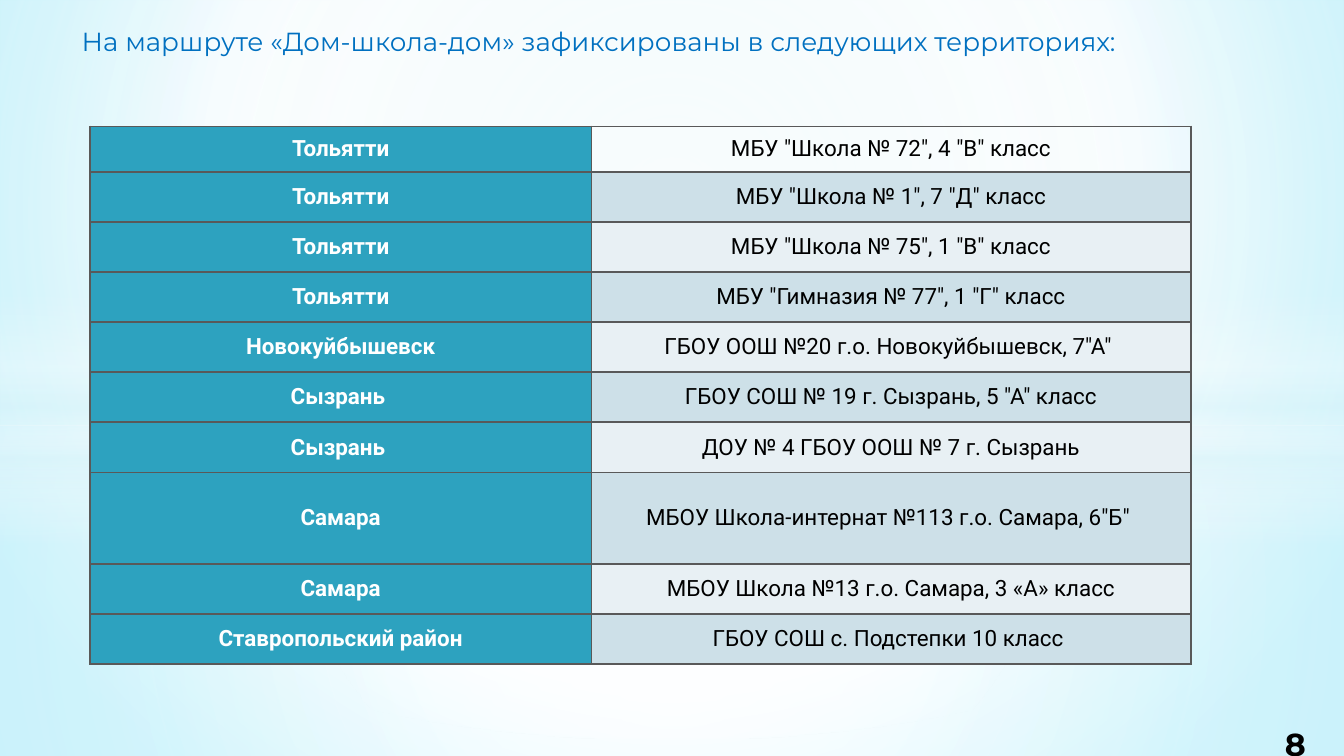
from lxml.etree import SubElement
from pptx import Presentation
from pptx.dml.color import RGBColor
from pptx.enum.shapes import MSO_SHAPE
from pptx.enum.text import MSO_ANCHOR, MSO_AUTO_SIZE, PP_ALIGN
from pptx.oxml.ns import qn
from pptx.util import Inches, Pt

ROWS = [
    ("Тольятти", 'МБУ "Школа № 72", 4 "В" класс'),
    ("Тольятти", 'МБУ "Школа № 1", 7 "Д" класс'),
    ("Тольятти", 'МБУ "Школа № 75", 1 "В" класс'),
    ("Тольятти", 'МБУ "Гимназия № 77", 1 "Г" класс'),
    ("Новокуйбышевск", 'ГБОУ ООШ №20 г.о. Новокуйбышевск, 7"А" '),
    ("Сызрань ", 'ГБОУ СОШ № 19 г. Сызрань, 5 "А" класс'),
    ("Сызрань ", "ДОУ № 4 ГБОУ ООШ № 7 г. Сызрань"),
    ("Самара", 'МБОУ Школа-интернат №113 г.о. Самара, 6"Б" '),
    ("Самара", "МБОУ Школа №13 г.о. Самара, 3 «А» класс"),
    ("Ставропольский район", "ГБОУ СОШ с. Подстепки 10 класс "),
]
WIDTHS = [3.73, 4.46]
TALL = 4  # whole table
HEIGHTS = {0: 0.34, 7: 0.68}  # the other rows share the rest
CENTER = (50, 50, 50, 50)


def color(code):
    return RGBColor.from_string(code)


def add_grad(props, stops, focus=None):
    """Swap the solid fill in props for a gradient: radial with a focus, else vertical."""
    old = props.find(qn("a:solidFill"))
    grad = SubElement(props, qn("a:gradFill"), rotWithShape="1")
    props.replace(old, grad)
    items = SubElement(grad, qn("a:gsLst"))
    for pos, code, alpha in stops:
        stop = SubElement(items, qn("a:gs"), pos=str(pos * 1000))
        tone = SubElement(stop, qn("a:srgbClr"), val=code)
        if alpha < 100:
            SubElement(tone, qn("a:alpha"), val=str(alpha * 1000))
    if focus:
        way = SubElement(grad, qn("a:path"), path="circle")
        sides = {side: str(part * 1000) for side, part in zip("ltrb", focus)}
        SubElement(way, qn("a:fillToRect"), **sides)
    else:
        SubElement(grad, qn("a:lin"), ang="5400000", scaled="0")


def add_glow(slide, kind, box, stops, focus=None):
    shape = slide.shapes.add_shape(kind, *map(Inches, box))
    shape.shadow.inherit = False
    shape.line.fill.background()
    shape.fill.solid()
    add_grad(shape.element.spPr, stops, focus)


def add_run(para, text, font, size, code, bold=False):
    run = para.add_run()
    run.text = text
    run.font.name = font
    run.font.size = Pt(size)
    run.font.bold = bold
    run.font.color.rgb = color(code)


def add_text(slide, box, text, size, code, bold=False, pads=(0.1, 0.05)):
    frame = slide.shapes.add_textbox(*map(Inches, box)).text_frame
    frame.word_wrap = True
    frame.auto_size = MSO_AUTO_SIZE.SHAPE_TO_FIT_TEXT
    frame.margin_left = frame.margin_right = Inches(pads[0])
    frame.margin_top = frame.margin_bottom = Inches(pads[1])
    add_run(frame.paragraphs[0], text, "Montserrat", size, code, bold)


def add_edges(cell, code, width):
    props = cell._tc.get_or_add_tcPr()
    for side in ("L", "R", "T", "B"):
        line = SubElement(props, qn("a:ln" + side), w=str(Pt(width)))
        fill = SubElement(line, qn("a:solidFill"))
        SubElement(fill, qn("a:srgbClr"), val=code)


def fill_cell(cell, text, code, back, bold):
    cell.margin_left = cell.margin_right = Inches(0.07)
    cell.margin_top = cell.margin_bottom = 0
    cell.vertical_anchor = MSO_ANCHOR.MIDDLE
    add_edges(cell, "595959", 1)
    if back:
        cell.fill.solid()
        cell.fill.fore_color.rgb = color(back)
    else:
        cell.fill.background()
    para = cell.text_frame.paragraphs[0]
    para.alignment = PP_ALIGN.CENTER
    add_run(para, text, "Roboto", 12, code, bold)


def add_grid(slide):
    even = (TALL - sum(HEIGHTS.values())) / (len(ROWS) - len(HEIGHTS))
    box = (0.67, 0.94, sum(WIDTHS), TALL)
    table = slide.shapes.add_table(len(ROWS), 2, *map(Inches, box)).table
    table.first_row = table.horz_banding = False
    for col, width in zip(table.columns, WIDTHS):
        col.width = Inches(width)
    for i, (town, school) in enumerate(ROWS):
        table.rows[i].height = Inches(HEIGHTS.get(i, even))
        band = ("CDE0E8" if i % 2 else "E8F0F4") if i else None
        fill_cell(table.cell(i, 0), town, "FFFFFF", "2DA2BF", True)
        fill_cell(table.cell(i, 1), school, "000000", band, False)


def add_back(slide):
    # Sky gradient
    slide.background.fill.solid()
    props = slide.element.find(".//" + qn("p:bgPr"))
    add_grad(props, [(0, "CDEFF7", 100), (60, "FFFFFF", 100),
                     (100, "7CE7FF", 100)], (20, 10, 20, 60))
    # Lower and upper haze
    rect = MSO_SHAPE.RECTANGLE
    add_glow(slide, rect, (0, 3.17, 10, 2.46),
             [(0, "FFFFFF", 91), (37, "FFFFFF", 76), (100, "DEF5FA", 79)], CENTER)
    add_glow(slide, rect, (0, 0, 10, 3.17),
             [(0, "FFFFFF", 89), (48, "FFFFFF", 62), (100, "DEF5FA", 79)], CENTER)
    # Horizon band and central light
    add_glow(slide, rect, (0, 2.18, 10, 1.88),
             [(0, "FFFFFF", 0), (29, "FFFFFF", 30), (45, "DEF5FA", 40),
              (55, "FFFFFF", 26), (65, "DEF5FA", 60), (100, "FFFFFF", 0)])
    add_glow(slide, MSO_SHAPE.OVAL, (0, 1.31, 10, 4.19),
             [(0, "FFFFFF", 100), (54, "FFFFFF", 0)], CENTER)


def main():
    deck = Presentation()
    deck.slide_width = Inches(10)
    deck.slide_height = Inches(10) * 9 // 16
    slide = deck.slides.add_slide(deck.slide_layouts[6])
    add_back(slide)
    # Page number and title
    add_text(slide, (9.48, 5.35, 0.52, 0.37), "8", 17, "000000", True, (0.08, 0.04))
    add_text(slide, (0.51, 0.14, 8.9, 0.34),
             "На маршруте «Дом-школа-дом» зафиксированы в следующих территориях:",
             14, "0070C0")
    # Towns and schools
    add_grid(slide)
    deck.save("out.pptx")


if __name__ == "__main__":
    main()
